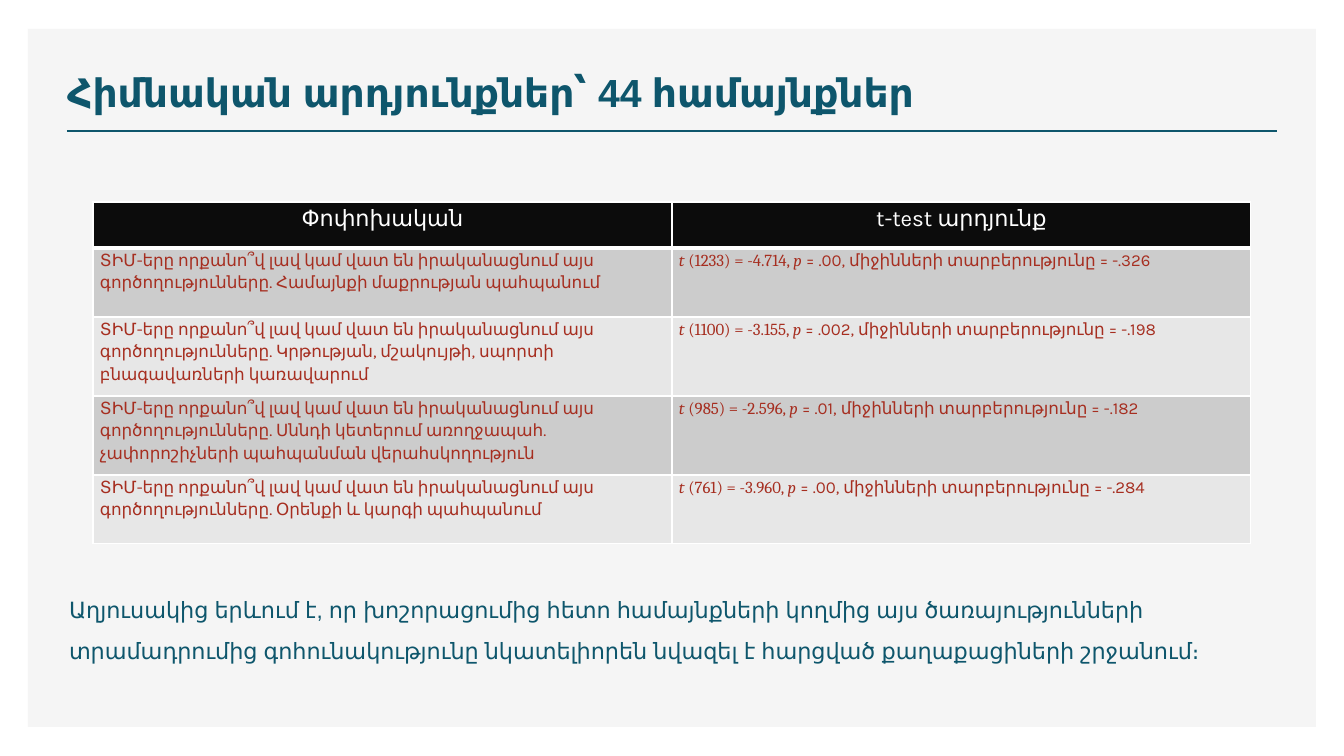
from dataclasses import dataclass

from lxml.etree import SubElement
from pptx import Presentation
from pptx.dml.color import RGBColor
from pptx.enum.shapes import MSO_CONNECTOR, MSO_SHAPE
from pptx.enum.text import MSO_ANCHOR, MSO_AUTO_SIZE, PP_ALIGN
from pptx.oxml.ns import qn
from pptx.util import Emu, Pt

SLIDE_WIDTH, SLIDE_HEIGHT = 1344, 756
EMU_PER_PX = 12192000 / SLIDE_WIDTH
COLORS = {
    "panel": "F5F5F5", "teal": "0E566C", "header": "0C0C0C", "white": "FFFFFF",
    "red": "A62E20", "dark band": "CCCCCC", "light band": "E7E7E7",
}
HEADINGS = ("Փոփոխական", "t-test արդյունք")
QUESTION = "ՏԻՄ-երը որքանո՞վ լավ կամ վատ են իրականացնում այս գործողությունները. "
CONCLUSION = (
    "Աղյուսակից երևում է, որ խոշորացումից հետո համայնքների կողմից այս ծառայությունների "
    "տրամադրումից գոհունակությունը նկատելիորեն նվազել է հարցված քաղաքացիների շրջանում։"
)
COLUMN_WIDTH = 579
HEADER_HEIGHT = 46


@dataclass
class TestResult:
    service: str
    freedom: str
    t_value: str
    p_value: str
    difference: str
    height: int


RESULTS = (
    TestResult("Համայնքի մաքրության պահպանում", "1233", "-4.714", ".00", "-.326", 69),
    TestResult("Կրթության, մշակույթի, սպորտի բնագավառների կառավարում",
               "1100", "-3.155", ".002", "-.198", 79),
    TestResult("Սննդի կետերում առողջապահ. չափորոշիչների պահպանման վերահսկողություն",
               "985", "-2.596", ".01", "-.182", 79),
    TestResult("Օրենքի և կարգի պահպանում", "761", "-3.960", ".00", "-.284", 69),
)


def px(length: float) -> Emu:
    return Emu(round(length * EMU_PER_PX))


def color(name: str) -> RGBColor:
    return RGBColor.from_string(COLORS[name])


def add_span(para, text: str, font: str, size: int, ink: str, bold=False, italic=False) -> None:
    span = para.add_run()
    span.text = text
    span.font.name = font
    span.font.size = Pt(size)
    span.font.bold = bold
    span.font.italic = italic
    span.font.color.rgb = color(ink)


def place(box, left: int, top: int, width: int, height: int) -> None:
    box.left, box.top, box.width, box.height = map(px, (left, top, width, height))


def add_panel(page) -> None:
    panel = page.shapes.add_shape(MSO_SHAPE.RECTANGLE, px(28), px(29), px(1288), px(698))
    panel.shadow.inherit = False
    panel.fill.solid()
    panel.fill.fore_color.rgb = color("panel")
    panel.line.fill.background()
    page.shapes.title.element.addprevious(panel.element)


def add_title_rule(page) -> None:
    rule = page.shapes.add_connector(MSO_CONNECTOR.STRAIGHT, px(67), px(131), px(1277), px(131))
    rule.line.color.rgb = color("teal")
    rule.line.width = Pt(2)
    SubElement(rule.element.spPr, qn("a:effectLst"))


def fill_title(box) -> None:
    place(box, 57, 49, 926, 71)
    frame = box.text_frame
    frame.auto_size = MSO_AUTO_SIZE.NONE
    frame.vertical_anchor = MSO_ANCHOR.BOTTOM
    para = frame.paragraphs[0]
    para.alignment = PP_ALIGN.LEFT
    add_span(para, "Հիմնական արդյունքներ՝ 44 համայնքներ", "Arial", 28, "teal", bold=True)


def fill_conclusion(box) -> None:
    place(box, 59, 578, 1218, 128)
    box.text_frame.auto_size = MSO_AUTO_SIZE.NONE
    para = box.text_frame.paragraphs[0]
    properties = para._p.get_or_add_pPr()
    properties.set("marL", "0")
    properties.set("indent", "0")
    SubElement(properties, qn("a:buNone"))
    para.line_spacing = 1.5
    para.space_before = Pt(0)
    para.space_after = Pt(12)
    add_span(para, CONCLUSION, "Arial", 16, "teal")


def style_cell(cell, fill: str, bottom_width: int = 1):
    """Set borders, fill and margins, and return the paragraph to write in."""
    properties = cell._tc.get_or_add_tcPr()
    for side in ("L", "R", "T", "B"):
        width = bottom_width if side == "B" else 1
        border = SubElement(properties, qn(f"a:ln{side}"), w=str(Pt(width)))
        paint = SubElement(border, qn("a:solidFill"))
        SubElement(paint, qn("a:srgbClr"), val=COLORS["white"])
    cell.fill.solid()
    cell.fill.fore_color.rgb = color(fill)
    cell.margin_left = cell.margin_right = px(7)
    cell.margin_top = cell.margin_bottom = 0
    para = cell.text_frame.paragraphs[0]
    para.line_spacing = 1.15
    para.space_after = Pt(10)
    return para


def add_results_table(page) -> None:
    heights = [HEADER_HEIGHT] + [result.height for result in RESULTS]
    table = page.shapes.add_table(
        len(heights), len(HEADINGS), px(93), px(202),
        px(COLUMN_WIDTH * len(HEADINGS)), px(sum(heights)),
    ).table
    for column in table.columns:
        column.width = px(COLUMN_WIDTH)
    for row, height in zip(table.rows, heights):
        row.height = px(height)

    for index, heading in enumerate(HEADINGS):
        para = style_cell(table.cell(0, index), "header", bottom_width=3)
        para.alignment = PP_ALIGN.CENTER
        add_span(para, heading, "Karla", 16, "white")

    for index, result in enumerate(RESULTS, start=1):
        band = "dark band" if index % 2 else "light band"
        question = style_cell(table.cell(index, 0), band)
        add_span(question, QUESTION + result.service, "Karla", 12, "red")
        statistic = style_cell(table.cell(index, 1), band)
        add_span(statistic, "t", "Cambria", 12, "red", italic=True)
        add_span(statistic, f" ({result.freedom}) = {result.t_value}, ", "Cambria", 12, "red")
        add_span(statistic, "p", "Cambria", 12, "red", italic=True)
        add_span(statistic, f" = {result.p_value}, միջինների տարբերությունը = {result.difference}",
                 "Karla", 12, "red")


def main() -> None:
    deck = Presentation()
    deck.slide_width, deck.slide_height = px(SLIDE_WIDTH), px(SLIDE_HEIGHT)
    page = deck.slides.add_slide(deck.slide_layouts[1])
    add_panel(page)
    add_title_rule(page)
    fill_title(page.shapes.title)
    fill_conclusion(page.placeholders[1])
    add_results_table(page)
    deck.save("out.pptx")


if __name__ == "__main__":
    main()
